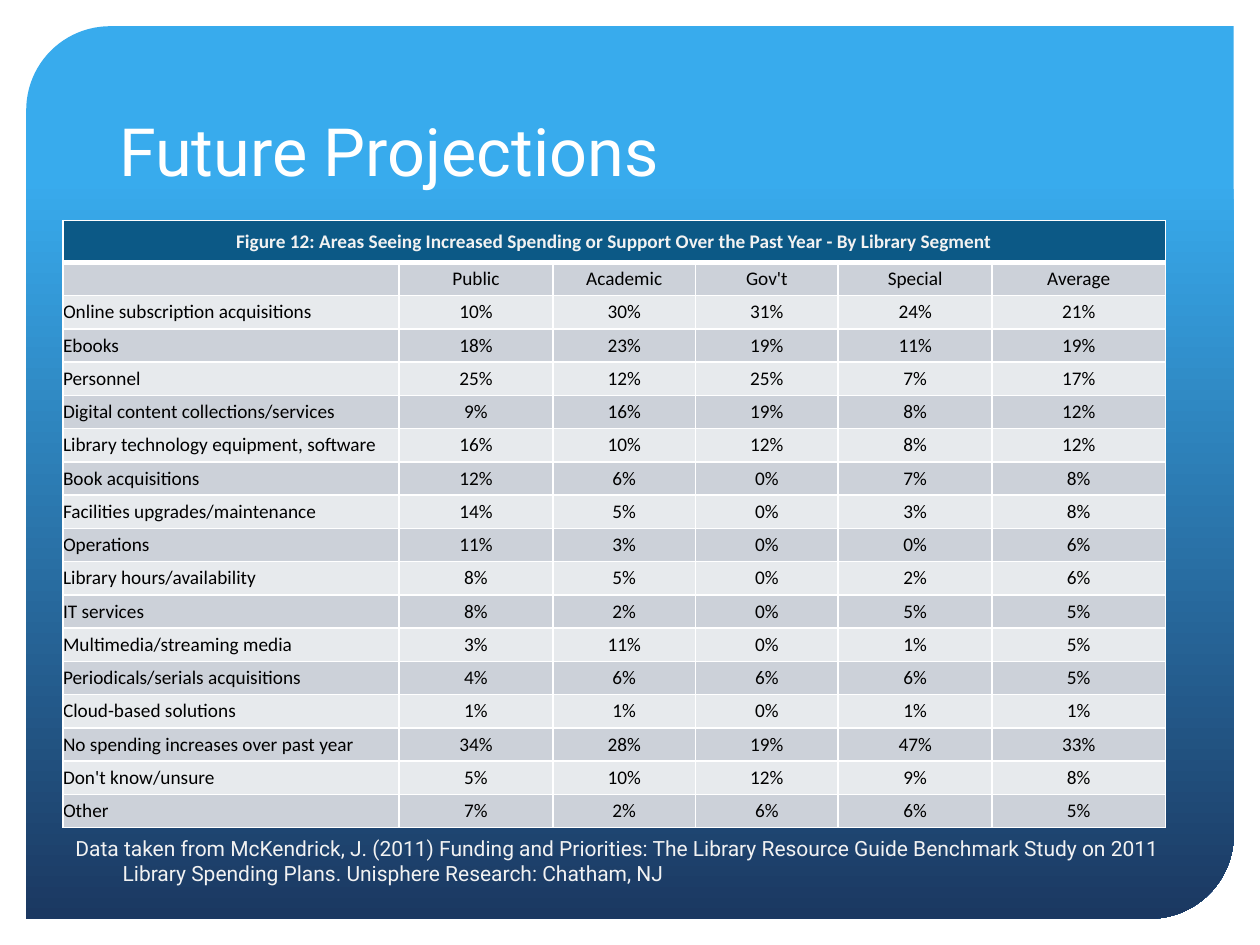
from lxml.etree import SubElement
from pptx import Presentation
from pptx.dml.color import RGBColor
from pptx.enum.shapes import MSO_SHAPE
from pptx.enum.text import MSO_ANCHOR, PP_ALIGN
from pptx.oxml.ns import qn
from pptx.util import Pt

WHITE = RGBColor(0xFF, 0xFF, 0xFF)
BLACK = RGBColor(0x00, 0x00, 0x00)
PALE = RGBColor(0xF2, 0xF2, 0xF2)
SKY = RGBColor(0x38, 0xAB, 0xED)
NAVY = RGBColor(0x1B, 0x38, 0x61)
HEADER = RGBColor(0x0C, 0x59, 0x86)
BANDS = [RGBColor(0xE7, 0xEA, 0xED), RGBColor(0xCC, 0xD1, 0xD9)]

CAPTION = ("Figure 12: Areas Seeing Increased Spending or Support "
           "Over the Past Year - By Library Segment")
SEGMENTS = ["Public", "Academic", "Gov't", "Special", "Average"]
SPENDING = [
    ("Online subscription acquisitions", 10, 30, 31, 24, 21),
    ("Ebooks", 18, 23, 19, 11, 19),
    ("Personnel", 25, 12, 25, 7, 17),
    ("Digital content collections/services", 9, 16, 19, 8, 12),
    ("Library technology equipment, software", 16, 10, 12, 8, 12),
    ("Book acquisitions", 12, 6, 0, 7, 8),
    ("Facilities upgrades/maintenance", 14, 5, 0, 3, 8),
    ("Operations", 11, 3, 0, 0, 6),
    ("Library hours/availability", 8, 5, 0, 2, 6),
    ("IT services", 8, 2, 0, 5, 5),
    ("Multimedia/streaming media", 3, 11, 0, 1, 5),
    ("Periodicals/serials acquisitions", 4, 6, 6, 6, 5),
    ("Cloud-based solutions", 1, 1, 0, 1, 1),
    ("No spending increases over past year", 34, 28, 19, 47, 33),
    ("Don't know/unsure", 5, 10, 12, 9, 8),
    ("Other", 7, 2, 6, 6, 5),
]
SOURCE = ("Data taken from McKendrick, J. (2011) Funding and Priorities: "
          "The Library Resource Guide Benchmark Study on 2011 Library "
          "Spending Plans. Unisphere Research: Chatham, NJ")
COL_WIDTHS = [192, 88, 81.5, 81.5, 88, 99]
CAPTION_HEIGHT, ROW_HEIGHT = 24, 19


def add_run(p, text, color, **font):
    r = p.add_run()
    r.text = text
    r.font.color.rgb = color
    for name, value in font.items():
        setattr(r.font, name, value)


def add_border(cell, side, width):
    """Draw a white line on one side of a cell: L, R, T or B."""
    ln = SubElement(cell._tc.get_or_add_tcPr(), qn(f"a:ln{side}"), w=str(Pt(width)))
    SubElement(SubElement(ln, qn("a:solidFill")), qn("a:srgbClr"), val=str(WHITE))


prs = Presentation()
prs.slide_width, prs.slide_height = Pt(720), Pt(540)
s = prs.slides.add_slide(prs.slide_layouts[6])

# Background panel
sp = s.shapes.add_shape(MSO_SHAPE.ROUND_2_DIAG_RECTANGLE,
                        Pt(15), Pt(15), Pt(690), Pt(510))
sp.shadow.inherit = False
sp.adjustments[0], sp.adjustments[1] = 0.094, 0
sp.line.fill.background()
sp.fill.gradient()
sp.fill.gradient_angle = 270
for stop, position, color in zip(sp.fill.gradient_stops, (0.17, 1), (SKY, NAVY)):
    stop.position = position
    stop.color.rgb = color

# Title
tf = s.shapes.add_textbox(Pt(61), Pt(30), Pt(597), Pt(82)).text_frame
tf.word_wrap = True
tf.vertical_anchor = MSO_ANCHOR.BOTTOM
add_run(tf.paragraphs[0], "Future Projections", WHITE, name="Roboto", size=Pt(38))

# Spending table
rows = [[CAPTION] + [""] * len(SEGMENTS), [""] + SEGMENTS]
rows += [[area] + [f"{v}%" for v in values] for area, *values in SPENDING]
height = CAPTION_HEIGHT + ROW_HEIGHT * (len(rows) - 1)
table = s.shapes.add_table(len(rows), len(COL_WIDTHS), Pt(36), Pt(126),
                           Pt(sum(COL_WIDTHS)), Pt(height)).table
table.horz_banding = False
for column, width in zip(table.columns, COL_WIDTHS):
    column.width = Pt(width)
for i, row in enumerate(rows):
    is_caption = i == 0
    table.rows[i].height = Pt(CAPTION_HEIGHT if is_caption else ROW_HEIGHT)
    for j, text in enumerate(row):
        cell = table.cell(i, j)
        for side in "LRTB":
            add_border(cell, side, 3 if is_caption and side == "B" else 1)
        cell.fill.solid()
        cell.fill.fore_color.rgb = HEADER if is_caption else BANDS[i % 2]
        cell.vertical_anchor = MSO_ANCHOR.MIDDLE
        for margin in ("left", "right", "top", "bottom"):
            setattr(cell, f"margin_{margin}", 0)
        p = cell.text_frame.paragraphs[0]
        p.alignment = PP_ALIGN.CENTER if is_caption or j else PP_ALIGN.LEFT
        if text:
            add_run(p, text, PALE if is_caption else BLACK,
                    name="Calibri", size=Pt(11), bold=is_caption)
        else:
            SubElement(p._p, qn("a:endParaRPr"), sz="1100")
table.cell(0, 0).merge(table.cell(0, len(SEGMENTS)))

# Source note with a hanging indent
tf = s.shapes.add_textbox(Pt(36), Pt(474), Pt(636), Pt(38)).text_frame
tf.word_wrap = True
p = tf.paragraphs[0]
pPr = p._p.get_or_add_pPr()
pPr.set("marL", str(Pt(27)))
pPr.set("indent", str(Pt(-27)))
add_run(p, SOURCE, PALE, name="Roboto", size=Pt(12))

prs.save("out.pptx")
